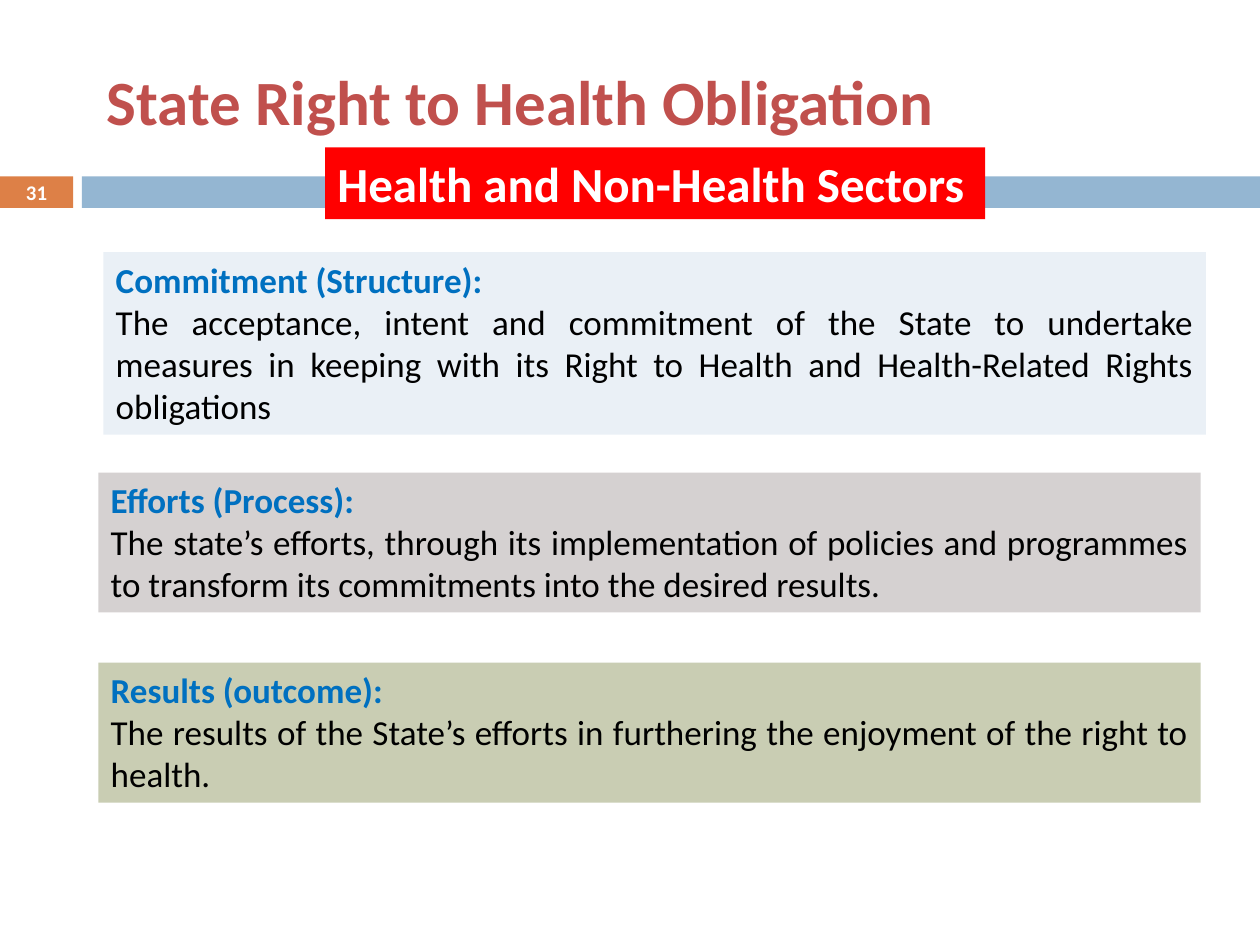
import dataclasses

import pptx
import pptx.dml.color
import pptx.enum.shapes
import pptx.enum.text
import pptx.util

Inches = pptx.util.Inches
Align = pptx.enum.text.PP_ALIGN
Anchor = pptx.enum.text.MSO_ANCHOR


@dataclasses.dataclass(frozen=True)
class Theme:
    font: str = "Calibri"
    title: str = "C0504D"
    heading: str = "0070C0"
    body: str = "000000"
    white: str = "FFFFFF"
    orange: str = "DD8047"
    blue: str = "94B6D2"
    red: str = "FF0000"
    commitment: str = "EAF0F6"
    efforts: str = "D5D1D1"
    results: str = "C9CDB3"
    title_size: float = 36
    banner_size: float = 28
    body_size: float = 20
    number_size: float = 11.9


THEME = Theme()


def rgb(value):
    return pptx.dml.color.RGBColor.from_string(value)


def add_box(slide, left, top, width, height, fill):
    box = slide.shapes.add_shape(
        pptx.enum.shapes.MSO_SHAPE.RECTANGLE,
        Inches(left), Inches(top), Inches(width), Inches(height))
    box.shadow.inherit = False
    box.fill.solid()
    box.fill.fore_color.rgb = rgb(fill)
    box.line.fill.background()
    return box


def add_label(slide, left, top, width, height):
    return slide.shapes.add_textbox(
        Inches(left), Inches(top), Inches(width), Inches(height))


def set_frame(shape, anchor=Anchor.TOP, wrap=True):
    shape.text_frame.word_wrap = wrap
    shape.text_frame.vertical_anchor = anchor


def write(paragraph, text, *, size, color, bold=True, align=Align.JUSTIFY):
    paragraph.alignment = align
    run = paragraph.add_run()
    run.text = text
    run.font.name = THEME.font
    run.font.size = pptx.util.Pt(size)
    run.font.bold = bold
    run.font.color.rgb = rgb(color)


def add_title(slide, text):
    title = add_label(slide, 0.75, 0.17, 8.83, 1.25)
    set_frame(title, Anchor.MIDDLE)
    write(title.text_frame.paragraphs[0], text,
          size=THEME.title_size, color=THEME.title)


def add_number_strip(slide, number):
    """Draw the band across the slide with the page number at its left end."""
    add_box(slide, 0, 1.4, 0.58, 0.25, THEME.orange)
    add_box(slide, 0.65, 1.4, 9.35, 0.25, THEME.blue)
    page = add_label(slide, 0, 1.39, 0.58, 0.27)
    set_frame(page, Anchor.MIDDLE)
    write(page.text_frame.paragraphs[0], number, size=THEME.number_size,
          color=THEME.white, align=Align.CENTER)


def add_definition(slide, left, top, height, fill, heading, body):
    panel = add_box(slide, left, top, 8.75, height, fill)
    set_frame(panel)
    frame = panel.text_frame
    write(frame.paragraphs[0], heading,
          size=THEME.body_size, color=THEME.heading)
    write(frame.add_paragraph(), body,
          size=THEME.body_size, color=THEME.body, bold=False)


def add_banner(slide, text):
    banner = add_box(slide, 2.58, 1.17, 5.24, 0.57, THEME.red)
    set_frame(banner, wrap=False)
    write(banner.text_frame.paragraphs[0], text, size=THEME.banner_size,
          color=THEME.white, align=Align.LEFT)


def main():
    deck = pptx.Presentation()
    deck.slide_width, deck.slide_height = Inches(10), Inches(7.5)
    slide = deck.slides.add_slide(deck.slide_layouts[6])

    add_number_strip(slide, "31")
    add_title(slide, "State Right to Health Obligation")
    definitions = [
        (0.82, 2, 1.45, THEME.commitment, "Commitment (Structure):",
         "The acceptance, intent and commitment of the State to undertake "
         "measures in keeping with its Right to Health and Health-Related "
         "Rights obligations"),
        (0.78, 3.75, 1.11, THEME.efforts, "Efforts (Process):",
         "The state’s efforts, through its implementation of policies and "
         "programmes to transform its commitments into the desired results."),
        (0.78, 5.26, 1.11, THEME.results, "Results (outcome):",
         "The results of the State’s efforts in furthering the enjoyment of "
         "the right to health."),
    ]
    for definition in definitions:
        add_definition(slide, *definition)
    add_banner(slide, "Health and Non-Health Sectors")

    deck.save("out.pptx")


if __name__ == "__main__":
    main()
